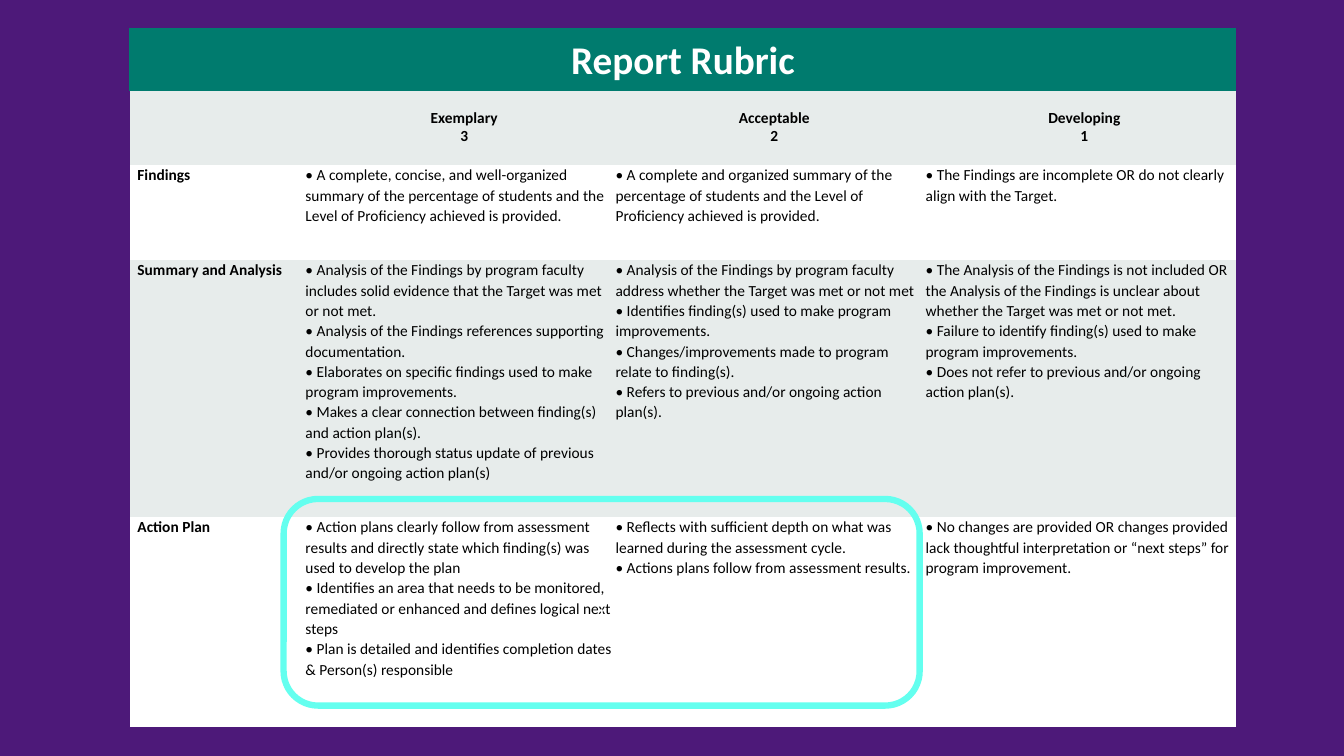
"""Build the Report Rubric slide."""

from dataclasses import dataclass

import lxml.etree
import pptx
import pptx.dml.color
import pptx.enum.shapes
import pptx.enum.text
import pptx.oxml.ns
import pptx.table
import pptx.text.text
import pptx.util

Pt = pptx.util.Pt
qn = pptx.oxml.ns.qn
CENTER = pptx.enum.text.PP_ALIGN.CENTER
MIDDLE = pptx.enum.text.MSO_ANCHOR.MIDDLE

COLORS = {
    "background": "4D1979",
    "title": "007B6E",
    "shaded": "E7ECEB",
    "plain": "FFFFFF",
    "text": "000000",
    "highlight": "64FFEF",
}
FONT = "Calibri"
NO_STYLE_NO_GRID = "{2D5ABB26-0587-4C30-8999-92F81FD0307C}"
CRITERION_WIDTH, LEVEL_WIDTH = 125.3, 221.5
TITLE_HEIGHT, LEVELS_HEIGHT = 44.9, 52.6
LABEL_INDENT = 5.3


@dataclass
class Level:
    name: str
    score: str


@dataclass
class Criterion:
    name: str
    height: float
    fill: str
    descriptors: list[list[str]]


LEVELS = [Level("Exemplary", "3"), Level("Acceptable", "2"), Level("Developing", "1")]

CRITERIA = [
    Criterion("Findings", 67.8, "plain", [
        ["A complete, concise, and well-organized summary of the percentage of students "
         "and the Level of Proficiency achieved is provided."],
        ["A complete and organized summary of the percentage of students "
         "and the Level of Proficiency achieved is provided."],
        ["The Findings are incomplete OR do not clearly align with the Target."],
    ]),
    Criterion("Summary and Analysis", 183.6, "shaded", [
        ["Analysis of the Findings by program faculty includes solid evidence "
         "that the Target was met or not met.",
         "Analysis of the Findings references supporting documentation.",
         "Elaborates on specific findings used to make program improvements.",
         "Makes a clear connection between finding(s) and action plan(s).",
         "Provides thorough status update of previous and/or ongoing action plan(s)"],
        ["Analysis of the Findings by program faculty address "
         "whether the Target was met or not met",
         "Identifies finding(s) used to make program improvements.",
         "Changes/improvements made to program relate to finding(s).",
         "Refers to previous and/or ongoing action plan(s)."],
        ["The Analysis of the Findings is not included OR the Analysis of the Findings "
         "is unclear about whether the Target was met or not met.",
         "Failure to identify finding(s) used to make program improvements.",
         "Does not refer to previous and/or ongoing action plan(s)."],
    ]),
    Criterion("Action Plan", 149.9, "plain", [
        ["Action plans clearly follow from assessment results and directly state "
         "which finding(s) was used to develop the plan",
         "Identifies an area that needs to be monitored, remediated or enhanced "
         "and defines logical next steps",
         "Plan is detailed and identifies completion dates & Person(s) responsible"],
        ["Reflects with sufficient depth on what was learned during the assessment cycle.",
         "Actions plans follow from assessment results."],
        ["No changes are provided OR changes provided lack thoughtful interpretation "
         "or “next steps” for program improvement."],
    ]),
]


def rgb(name: str) -> pptx.dml.color.RGBColor:
    """Return the named colour."""
    return pptx.dml.color.RGBColor.from_string(COLORS[name])


def write(frame: pptx.text.text.TextFrame, lines: list[str], size: float = 11,
          color: str = "text", bold: bool = False, centered: bool = False,
          spacing: float | pptx.util.Length = 1.07) -> None:
    """Write each line as a paragraph of one run."""
    for index, line in enumerate(lines):
        paragraph = frame.add_paragraph() if index else frame.paragraphs[0]
        paragraph.line_spacing = spacing
        if centered:
            paragraph.alignment = CENTER
        run = paragraph.add_run()
        run.text = line
        run.font.name = FONT
        run.font.size = Pt(size)
        run.font.bold = bold
        run.font.color.rgb = rgb(color)


def prepare(cell: pptx.table._Cell, fill: str, indent: float = 0) -> None:
    """Fill a cell and set its margins."""
    cell.fill.solid()
    cell.fill.fore_color.rgb = rgb(fill)
    cell.margin_left = Pt(indent)
    cell.margin_top = cell.margin_right = cell.margin_bottom = Pt(0)


def add_borders(cell: pptx.table._Cell, color: str) -> None:
    """Draw the left, right and top borders of a cell."""
    properties = cell._tc.get_or_add_tcPr()
    for index, side in enumerate(("a:lnL", "a:lnR", "a:lnT")):
        border = lxml.etree.Element(qn(side), w=str(Pt(1)))
        solid = lxml.etree.SubElement(border, qn("a:solidFill"))
        lxml.etree.SubElement(solid, qn("a:srgbClr"), val=COLORS[color])
        properties.insert(index, border)


def add_rubric(slide: pptx.slide.Slide) -> None:
    """Add the rubric table."""
    heights = [TITLE_HEIGHT, LEVELS_HEIGHT] + [criterion.height for criterion in CRITERIA]
    widths = [CRITERION_WIDTH] + [LEVEL_WIDTH] * len(LEVELS)
    rubric = slide.shapes.add_table(len(heights), len(widths), Pt(92.9), Pt(20.2),
                                    Pt(sum(widths)), Pt(sum(heights))).table
    rubric.first_row = rubric.horz_banding = False
    rubric._tbl.tblPr.find(qn("a:tableStyleId")).text = NO_STYLE_NO_GRID
    for row, height in zip(rubric.rows, heights):
        row.height = Pt(height)
    for column, width in zip(rubric.columns, widths):
        column.width = Pt(width)

    title = rubric.cell(0, 0)
    title.merge(rubric.cell(0, len(LEVELS)))
    prepare(title, "title")
    add_borders(title, "title")
    title.vertical_anchor = MIDDLE
    write(title.text_frame, ["Report Rubric"], 28, "plain", bold=True, centered=True)

    prepare(rubric.cell(1, 0), "shaded")
    for column, level in enumerate(LEVELS, 1):
        heading = rubric.cell(1, column)
        prepare(heading, "shaded", LABEL_INDENT)
        heading.vertical_anchor = MIDDLE
        write(heading.text_frame, [level.name, level.score], bold=True, centered=True,
              spacing=Pt(12.8))

    for row, criterion in enumerate(CRITERIA, 2):
        label = rubric.cell(row, 0)
        prepare(label, criterion.fill, LABEL_INDENT)
        write(label.text_frame, [criterion.name], bold=True)
        for column, descriptors in enumerate(criterion.descriptors, 1):
            cell = rubric.cell(row, column)
            prepare(cell, criterion.fill)
            write(cell.text_frame, [f"• {descriptor}" for descriptor in descriptors])


def add_highlight(slide: pptx.slide.Slide) -> None:
    """Outline the upper two levels of the action plan."""
    highlight = slide.shapes.add_shape(pptx.enum.shapes.MSO_SHAPE.ROUNDED_RECTANGLE,
                                       Pt(202.6), Pt(356.4), Pt(454.3), Pt(147.6))
    highlight.shadow.inherit = False
    highlight.fill.background()
    highlight.line.color.rgb = rgb("highlight")
    highlight.line.width = Pt(4.5)
    highlight.text_frame.vertical_anchor = MIDDLE
    write(highlight.text_frame, [","], 18, "plain", centered=True, spacing=1.0)


def main() -> None:
    """Build and save the presentation."""
    presentation = pptx.Presentation()
    presentation.slide_width, presentation.slide_height = Pt(960), Pt(540)
    slide = presentation.slides.add_slide(presentation.slide_layouts[6])
    slide.background.fill.solid()
    slide.background.fill.fore_color.rgb = rgb("background")
    add_rubric(slide)
    add_highlight(slide)
    presentation.save("out.pptx")


if __name__ == "__main__":
    main()
